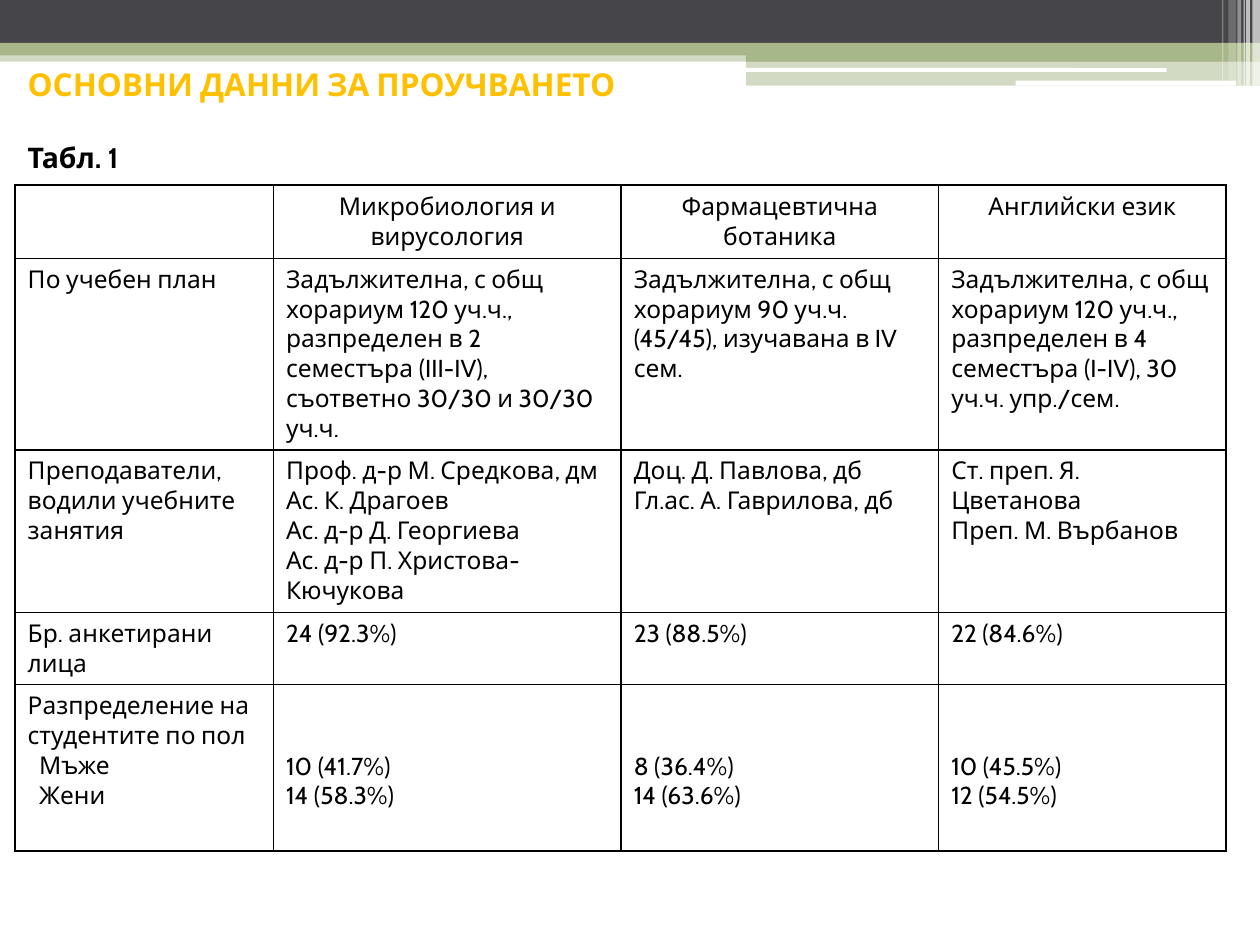
from dataclasses import dataclass

from lxml import etree
from pptx import Presentation
from pptx.dml.color import RGBColor
from pptx.enum.shapes import MSO_SHAPE
from pptx.enum.text import MSO_ANCHOR, MSO_AUTO_SIZE, PP_ALIGN
from pptx.oxml import parse_xml
from pptx.oxml.ns import nsdecls, qn
from pptx.util import Inches, Pt

RECT, ROUNDED = MSO_SHAPE.RECTANGLE, MSO_SHAPE.ROUNDED_RECTANGLE
LEFT, CENTER = PP_ALIGN.LEFT, PP_ALIGN.CENTER
MIDDLE, NO_FIT = MSO_ANCHOR.MIDDLE, MSO_AUTO_SIZE.NONE
TITLE_ONLY = 5


@dataclass(frozen=True)
class Theme:
    font: str = "Cabin"
    dark: str = "46464A"
    green: str = "A7B789"
    white: str = "FFFFFF"
    heading: str = "FFC000"
    text: str = "000000"
    heading_size: float = 18
    caption_size: float = 16.2
    table_size: float = 14
    rule: float = 1


THEME = Theme()

# The slide is a grid of 1000 columns by 750 rows
COLUMNS, ROWS = 1000, 750
CELL = Inches(10) // COLUMNS
LINE_ROWS = 24  # one line of table text

HEADER = ["", "Микробиология и вирусология", "Фармацевтична ботаника", "Английски език"]
BODY = [
    ["По учебен план",
     "Задължителна, с общ хорариум 120 уч.ч., разпределен в 2 семестъра (III-IV), "
     "съответно 30/30 и 30/30 уч.ч.",
     "Задължителна, с общ хорариум 90 уч.ч. (45/45), изучавана в IV сем.",
     "Задължителна, с общ хорариум 120 уч.ч., разпределен в 4 семестъра (I-IV), "
     "30 уч.ч. упр./сем."],
    ["Преподаватели, водили учебните занятия",
     "Проф. д-р М. Средкова, дм\nАс. К. Драгоев\nАс. д-р Д. Георгиева\n"
     "Ас. д-р П. Христова-Кючукова",
     "Доц. Д. Павлова, дб\nГл.ас. А. Гаврилова, дб",
     "Ст. преп. Я. Цветанова\nПреп. М. Върбанов"],
    ["Бр. анкетирани лица", "24 (92.3%)", "23 (88.5%)", "22 (84.6%)"],
    ["Разпределение на студентите по пол\nМъже\nЖени",
     "10 (41.7%)\n14 (58.3%)", "8 (36.4%)\n14 (63.6%)", "10 (45.5%)\n12 (54.5%)"],
]
COLUMN_WIDTHS = [205, 276, 252, 228]
ROW_HEIGHTS = [58, 152, 129, 57, 132]


def grid(*cells):
    return [round(cell * CELL) for cell in cells]


def write(paragraph, text, *, size, color=THEME.text, bold=False, align=LEFT,
          before=0, indent=0):
    properties = paragraph._p.get_or_add_pPr()
    properties.set("marL", str(round(indent * CELL)))
    properties.set("indent", "0")
    paragraph.alignment = align
    paragraph.space_before = Pt(before)
    paragraph.text = text
    font = paragraph.font
    font.name, font.size, font.bold = THEME.font, Pt(size), bold
    font.color.rgb = RGBColor.from_string(color)


def add_bar(slide, box, color, opacity=100, shape=RECT):
    bar = slide.shapes.add_shape(shape, *grid(*box))
    bar.shadow.inherit = False
    bar.fill.solid()
    bar.fill.fore_color.rgb = RGBColor.from_string(color)
    bar.line.fill.background()
    if opacity < 100:
        srgb = bar._element.spPr.find(".//" + qn("a:srgbClr"))
        etree.SubElement(srgb, qn("a:alpha"), val=str(opacity * 1000))


def add_banner(slide, left, top, width):
    # Full-width bands
    add_bar(slide, (left, top + 40, width, 9), THEME.green, 50)
    add_bar(slide, (left, top, width, 34), THEME.dark)
    add_bar(slide, (left, top + 34, width, 10), THEME.green)
    # Step on the right, cut by two white strips
    right = left + width
    add_bar(slide, (right - 408, top + 39, 408, 10), THEME.green)
    add_bar(slide, (right - 408, top + 48, 408, 20), THEME.green, 50)
    add_bar(slide, (right - 409, top + 54, 335, 3), THEME.white, shape=ROUNDED)
    add_bar(slide, (right - 194, top + 64, 175, 4), THEME.white, shape=ROUNDED)
    # Fading stripes: distance from the right edge, width, height, opacity
    for offset, stripe, height, opacity in [
            (6, 6, 68, 65), (11, 3, 68, 65), (13, 1, 68, 60),
            (18, 3, 68, 40), (25, 6, 64, 20), (30, 1, 64, 30)]:
        add_bar(slide, (right - offset, top, stripe, height), THEME.white, opacity)


def place_title(slide, box):
    title = slide.shapes.title
    title.left, title.top, title.width, title.height = grid(*box)
    slide.shapes._spTree.append(title._element)  # in front of the banner
    frame = title.text_frame
    frame.auto_size, frame.word_wrap = NO_FIT, True
    frame.vertical_anchor = MIDDLE
    write(frame.paragraphs[0], "ОСНОВНИ ДАННИ ЗА ПРОУЧВАНЕТО",
          size=THEME.heading_size, color=THEME.heading, bold=True)
    write(frame.add_paragraph(), "Табл. 1",
          size=THEME.caption_size, bold=True, before=21)


def outline(cell):
    properties = cell._tc.get_or_add_tcPr()
    for side in "LRTB":
        properties.append(parse_xml(
            f'<a:ln{side} {nsdecls("a")} w="{Pt(THEME.rule)}"><a:solidFill>'
            f'<a:srgbClr val="{THEME.text}"/></a:solidFill></a:ln{side}>'))
    cell.fill.background()


def add_survey_table(slide, left, top):
    rows = [HEADER] + BODY
    box = grid(left, top, sum(COLUMN_WIDTHS), sum(ROW_HEIGHTS))
    table = slide.shapes.add_table(len(rows), len(HEADER), *box).table
    table.first_row = table.horz_banding = False
    for column, width in zip(table.columns, grid(*COLUMN_WIDTHS)):
        column.width = width
    for row, height in zip(table.rows, grid(*ROW_HEIGHTS)):
        row.height = height

    for r, texts in enumerate(rows):
        for c, text in enumerate(texts):
            cell = table.cell(r, c)
            outline(cell)
            by_sex = r == len(rows) - 1
            if by_sex and c:  # level with the labels below the two-line heading
                cell.margin_top = grid(5 + 2 * LINE_ROWS)[0]
            for i, line in enumerate(text.split("\n")):
                frame = cell.text_frame
                paragraph = frame.add_paragraph() if i else frame.paragraphs[0]
                write(paragraph, line, size=THEME.table_size,
                      align=LEFT if r else CENTER,
                      indent=9 if by_sex and i and not c else 0)


def main():
    deck = Presentation()
    deck.slide_width, deck.slide_height = grid(COLUMNS, ROWS)
    slide = deck.slides.add_slide(deck.slide_layouts[TITLE_ONLY])
    add_banner(slide, 0, 0, COLUMNS)
    place_title(slide, (12, 50, 953, 90))
    add_survey_table(slide, 12, 147)
    deck.save("out.pptx")


if __name__ == "__main__":
    main()
